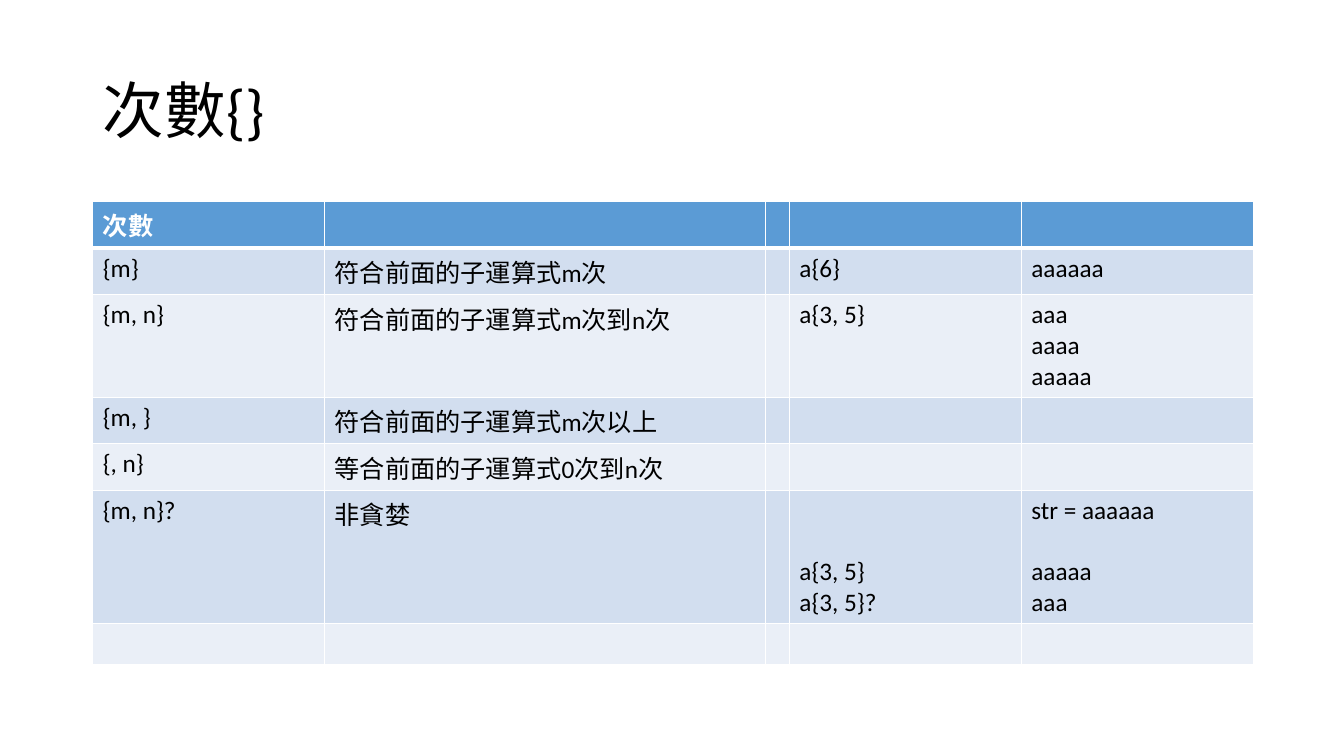
from lxml import etree
from pptx import Presentation
from pptx.dml.color import RGBColor
from pptx.enum import text
from pptx.oxml import ns
from pptx.util import Inches, Pt

COLORS = {
    "black": "000000",
    "white": "FFFFFF",
    "header": "5B9BD5",
    "odd": "D2DEEF",
    "even": "EAEFF7",
}
FONT = "Calibri"
COLUMN_WIDTHS = [2.3, 4.37, 0.23, 2.3, 2.3]
ROW_HEIGHT = 0.41
ROWS = [
    ["次數", "", "", "", ""],
    ["{m}", "符合前面的子運算式m次", "", "a{6}", "aaaaaa"],
    ["{m, n}", "符合前面的子運算式m次到n次", "", "a{3, 5}", "aaa\naaaa\naaaaa"],
    ["{m, }", "符合前面的子運算式m次以上", "", "", ""],
    ["{, n}", "等合前面的子運算式0次到n次", "", "", ""],
    ["{m, n}?", "非貪婪", "", "a{3, 5}\na{3, 5}?", "str = aaaaaa\naaaaa\naaa"],
    ["", "", "", "", ""],
]
GREEDY_ROW, PATTERN_COLUMN, RESULT_COLUMN = 5, 3, 4


def color(name):
    return RGBColor.from_string(COLORS[name])


def write_text(frame, content, size=18, ink="black", bold=False, line_spacing=None):
    frame.text = content
    for para in frame.paragraphs:
        para.alignment = text.PP_ALIGN.LEFT
        para.line_spacing = line_spacing
        para.font.size = Pt(size)
        for span in para.runs:
            span.font.name = FONT
            span.font.size = Pt(size)
            span.font.bold = bold
            span.font.color.rgb = color(ink)


def add_border(cell, side, width):
    properties = cell._tc.get_or_add_tcPr()
    line = etree.SubElement(properties, ns.qn(f"a:ln{side}"), w=str(Pt(width)))
    fill = etree.SubElement(line, ns.qn("a:solidFill"))
    etree.SubElement(fill, ns.qn("a:srgbClr"), val=COLORS["white"])


def format_cell(cell, row):
    for side in "LRTB":
        below_header = (row, side) in [(0, "B"), (1, "T")]
        add_border(cell, side, 3 if below_header else 1)
    cell.fill.solid()
    band = "odd" if row % 2 else "even"
    cell.fill.fore_color.rgb = color(band if row else "header")


def add_title(slide, content):
    title = slide.shapes.title
    title.left, title.top = Inches(0.92), Inches(0.4)
    title.width, title.height = Inches(11.5), Inches(1.45)
    title.text_frame.vertical_anchor = text.MSO_ANCHOR.MIDDLE
    write_text(title.text_frame, content, size=44, line_spacing=0.9)


def add_quantifier_table(slide):
    frame = slide.shapes.add_table(
        len(ROWS), len(COLUMN_WIDTHS), Inches(0.92), Inches(2),
        Inches(sum(COLUMN_WIDTHS)), Inches(ROW_HEIGHT * len(ROWS)),
    )
    table = frame.table
    for column, width in zip(table.columns, COLUMN_WIDTHS):
        column.width = Inches(width)
    for row, contents in enumerate(ROWS):
        table.rows[row].height = Inches(ROW_HEIGHT)
        for column, content in enumerate(contents):
            cell = table.cell(row, column)
            format_cell(cell, row)
            write_text(cell.text_frame, content, bold=row == 0,
                       ink="black" if row else "white")
    table.cell(GREEDY_ROW, PATTERN_COLUMN).vertical_anchor = text.MSO_ANCHOR.BOTTOM
    result = table.cell(GREEDY_ROW, RESULT_COLUMN).text_frame
    result.paragraphs[0].space_after = Pt(22)


def main():
    deck = Presentation()
    deck.slide_width, deck.slide_height = Inches(13.33), Inches(7.5)
    slide = deck.slides.add_slide(deck.slide_layouts.get_by_name("Title Only"))
    add_title(slide, "次數{}")
    add_quantifier_table(slide)
    deck.save("out.pptx")


if __name__ == "__main__":
    main()
